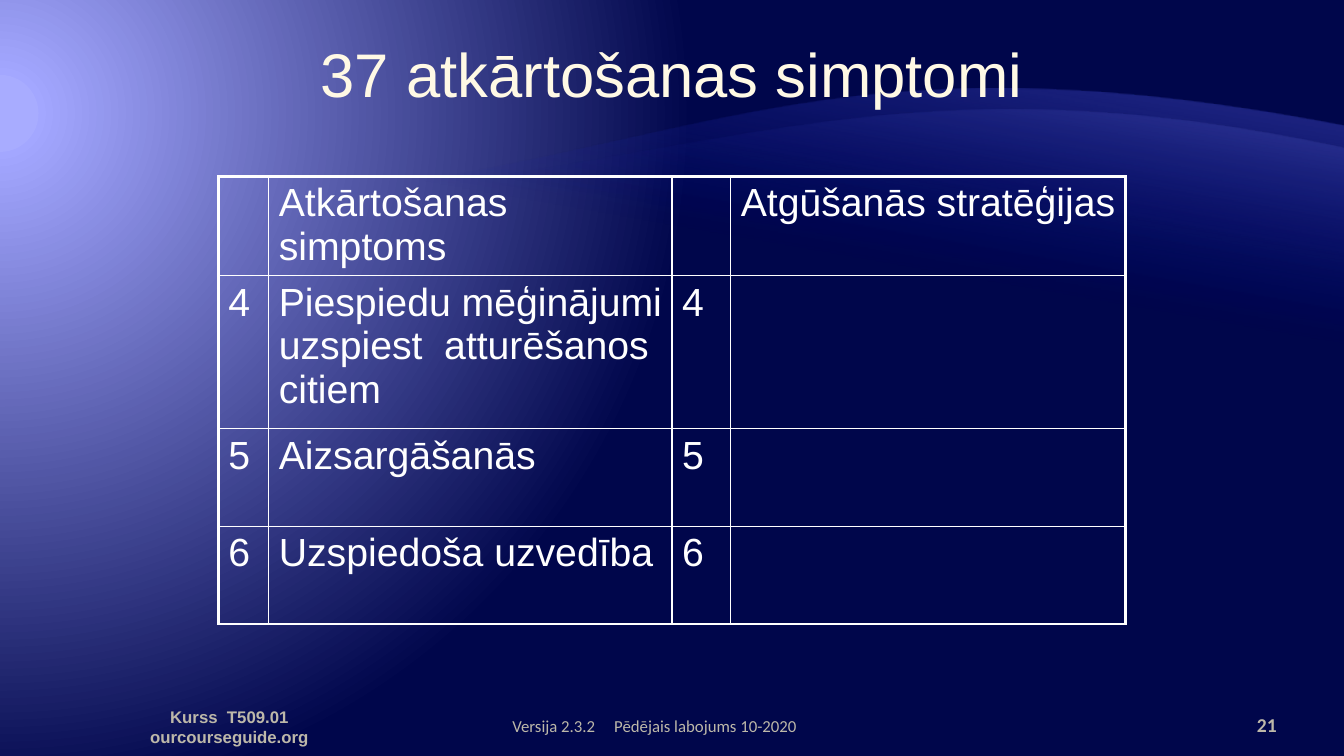
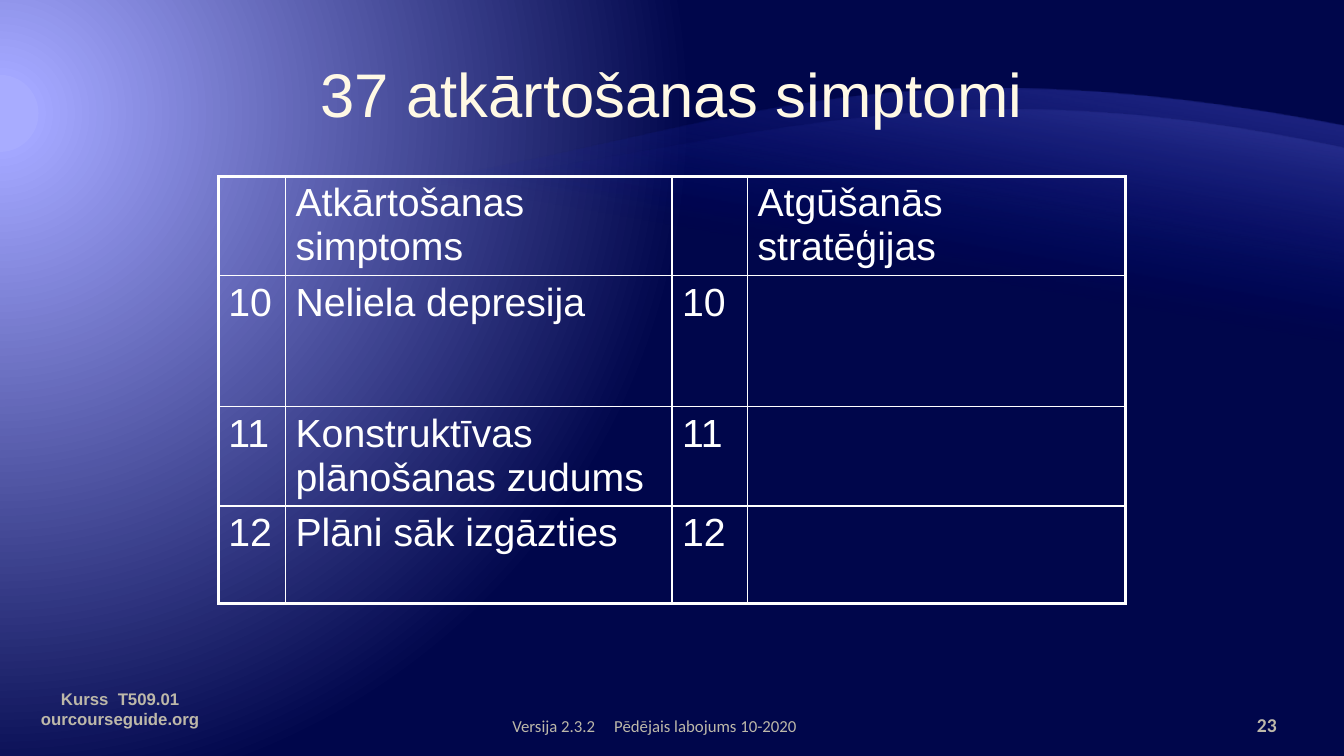
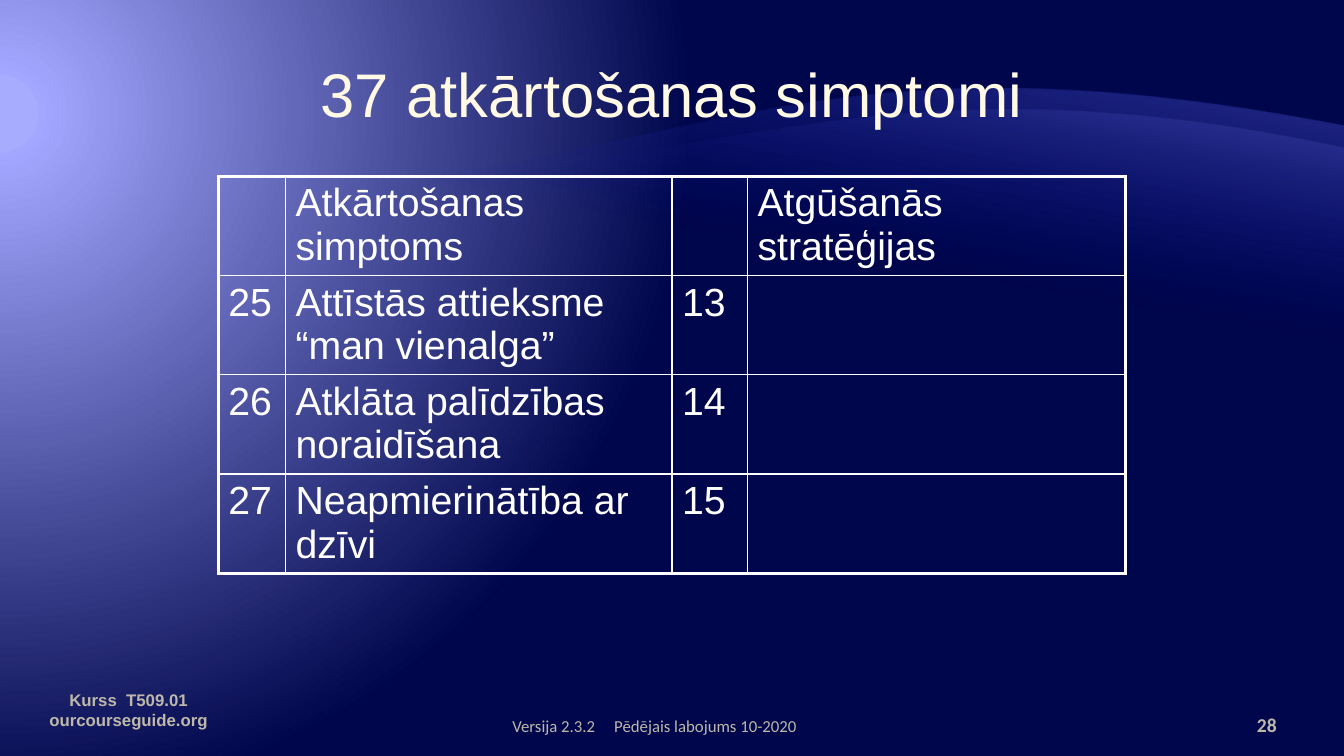
from dataclasses import dataclass

from lxml import etree
from pptx import Presentation
from pptx.dml.color import RGBColor
from pptx.enum.text import MSO_ANCHOR, PP_ALIGN
from pptx.oxml import parse_xml
from pptx.oxml.ns import nsdecls, qn
from pptx.util import Pt

PX = 9525  # EMU in one px, 96 px to the inch
LEFT, CENTER, RIGHT = PP_ALIGN.LEFT, PP_ALIGN.CENTER, PP_ALIGN.RIGHT
MIDDLE, BOTTOM = MSO_ANCHOR.MIDDLE, MSO_ANCHOR.BOTTOM


@dataclass(frozen=True)
class Theme:
    heading: str = "FFF9E5"
    text: str = "FFFFFF"
    muted: str = "BDB8A9"
    sky: tuple = ((5, "A8ACFF", 100), (5, "A3A7FF", 100), (90, "00064B", 100))
    far_wave: tuple = ((65, "000D9E", 0), (100, "797FFF", 55))
    near_wave: tuple = ((65, "000D9E", 0), (100, "A3A7FF", 30))
    font: str = "Arial"
    footer_font: str = "Calibri"
    title_size: int = 44
    table_size: int = 28
    number_size: int = 14
    footer_size: int = 12
    outer_line: float = 2.25
    inner_line: float = 1


THEME = Theme()
TITLE = "37 atkārtošanas simptomi"
HEADER = ("", "Atkārtošanas simptoms", "", "Atgūšanās stratēģijas")
COURSE = ("Kurss  T509.01", "ourcourseguide.org")
VERSION = "Versija 2.3.2\tPēdējais labojums 10-2020"
VERSION_TAB = 97
WIDE_NUMBERS = (64, 368, 72, 360)

# Each slide: number, title bottom inset, course place, columns, row heights, rows
SLIDES = (
    ("21", 43, (80, 678), (48, 384, 56, 376), (93, 146, 93, 93), (
        ("4", "Piespiedu mēģinājumi uzspiest  atturēšanos citiem", "4", ""),
        ("5", "Aizsargāšanās", "5", ""),
        ("6", "Uzspiedoša uzvedība", "6", ""))),
    ("23", 5, (-24, 661), WIDE_NUMBERS, (93, 125, 93, 93), (
        ("10", "Neliela depresija", "10", ""),
        ("11", "Konstruktīvas plānošanas zudums", "11", ""),
        ("12", "Plāni sāk izgāzties", "12", ""))),
    ("28", 5, (-16, 662), WIDE_NUMBERS, (93, 93, 93, 93), (
        ("25", "Attīstās attieksme “man vienalga”", "13", ""),
        ("26", "Atklāta palīdzības noraidīšana", "14", ""),
        ("27", "Neapmierinātība ar dzīvi", "15", ""))),
)


def write(frame, lines, font, size, color, bold=False, align=LEFT):
    """Write one paragraph a line and return the last one."""
    frame.word_wrap = True
    for index, line in enumerate(lines):
        para = frame.add_paragraph() if index else frame.paragraphs[0]
        para.alignment = align
        span = para.add_run()
        span.text = line
        span.font.name, span.font.size, span.font.bold = font, Pt(size), bold
        span.font.color.rgb = RGBColor.from_string(color)
    return para


def set_gradient(owner, stops, direction):
    """Replace the gradient fill inside an element."""
    old = next(owner.iter(qn("a:gradFill")))
    marks = "".join(
        f'<a:gs pos="{place * 1000}"><a:srgbClr val="{color}">'
        f'<a:alpha val="{alpha * 1000}"/></a:srgbClr></a:gs>'
        for place, color, alpha in stops)
    old.getparent().replace(old, parse_xml(
        f'<a:gradFill {nsdecls("a")} rotWithShape="1">'
        f"<a:gsLst>{marks}</a:gsLst>{direction}</a:gradFill>"))


deck = Presentation()
deck.slide_width, deck.slide_height = 1280 * PX, 720 * PX
blank = deck.slide_layouts[6]
for holder in list(blank.placeholders):
    blank.shapes.element.remove(holder.element)
pages = [deck.slides.add_slide(blank) for _ in SLIDES]

# Shared background on the master
deck.slide_master.background.fill.gradient()
set_gradient(
    deck.slide_master.element.cSld, THEME.sky,
    '<a:path path="circle"><a:fillToRect l="20000" t="30000" r="135000" b="100000"/></a:path>')

# Shared waves: a curved top over a straight base, moved to the layout
for base, stops, curve in (
    (704, THEME.far_wave, ((0, 204), (640, 204), (684, 5), (1280, 120))),
    (612, THEME.near_wave, ((0, 204), (640, 204), (765, 30), (1280, 141))),
):
    outline = pages[0].shapes.build_freeform(*curve[0], scale=PX)
    outline.add_line_segments([*curve[1:], (1280, base), (0, base)], close=True)
    wave = outline.convert_to_shape()
    wave.shadow.inherit = False
    wave.line.fill.background()
    wave.fill.gradient()
    set_gradient(wave.element, stops, '<a:lin ang="16800000" scaled="0"/>')
    # The first three segments become one cubic curve
    segments = list(wave.element.iter(qn("a:lnTo")))[:3]
    bezier = etree.Element(qn("a:cubicBezTo"))
    segments[0].addprevious(bezier)
    for segment in segments:
        bezier.append(segment[0])
        segment.getparent().remove(segment)
    blank.shapes.element.append(wave.element)

for page, (number, title_inset, course_at, columns, heights, rows) in zip(pages, SLIDES):
    # Title
    box = page.shapes.add_textbox(208 * PX, 29 * PX, 864 * PX, 120 * PX)
    box.text_frame.vertical_anchor = MIDDLE
    box.text_frame.margin_bottom = title_inset * PX
    write(box.text_frame, [TITLE], THEME.font, THEME.title_size, THEME.heading, align=CENTER)

    # Table with a heavy frame and thin inner lines
    cells = (HEADER, *rows)
    table = page.shapes.add_table(
        len(cells), len(columns), 208 * PX, 168 * PX, sum(columns) * PX, sum(heights) * PX).table
    table.first_row = table.horz_banding = False
    for column, width in zip(table.columns, columns):
        column.width = width * PX
    for r, words in enumerate(cells):
        table.rows[r].height = heights[r] * PX
        for c, word in enumerate(words):
            cell = table.cell(r, c)
            cell.fill.background()
            cell.margin_bottom = 0
            if word:
                para = write(cell.text_frame, [word], THEME.font, THEME.table_size, THEME.text)
                para._p.get_or_add_pPr().append(parse_xml(
                    f'<a:spcBef {nsdecls("a")}><a:spcPct val="20000"/></a:spcBef>'))
            edges = (("L", c == 0), ("R", c == len(columns) - 1),
                     ("T", r == 0), ("B", r == len(cells) - 1))
            for place, (side, outer) in enumerate(edges):
                weight = Pt(THEME.outer_line if outer else THEME.inner_line)
                cell._tc.get_or_add_tcPr().insert(place, parse_xml(
                    f'<a:ln{side} {nsdecls("a")} w="{weight}"><a:solidFill>'
                    f'<a:srgbClr val="{THEME.text}"/></a:solidFill></a:ln{side}>'))

    # Footer: slide number, course, version
    for (left, top, width), lines, font, size, bold, align, insets in (
        ((1141, 668, 75), [number], THEME.footer_font, THEME.number_size, True, RIGHT, (10, 0)),
        ((*course_at, 277), COURSE, THEME.font, THEME.footer_size, True, CENTER, (10, 10)),
        ((488, 668, 384), [VERSION], THEME.footer_font, THEME.footer_size, False, LEFT, (0, 10)),
    ):
        box = page.shapes.add_textbox(left * PX, top * PX, width * PX, 38 * PX)
        frame = box.text_frame
        frame.vertical_anchor = BOTTOM
        frame.margin_left, frame.margin_right = (inset * PX for inset in insets)
        para = write(frame, lines, font, size, THEME.muted, bold, align)

    # Tab stop between the two halves of the version line, which comes last
    tabs = etree.SubElement(para._p.get_or_add_pPr(), qn("a:tabLst"))
    etree.SubElement(tabs, qn("a:tab"), pos=str(VERSION_TAB * PX), algn="l")

deck.save("out.pptx")
